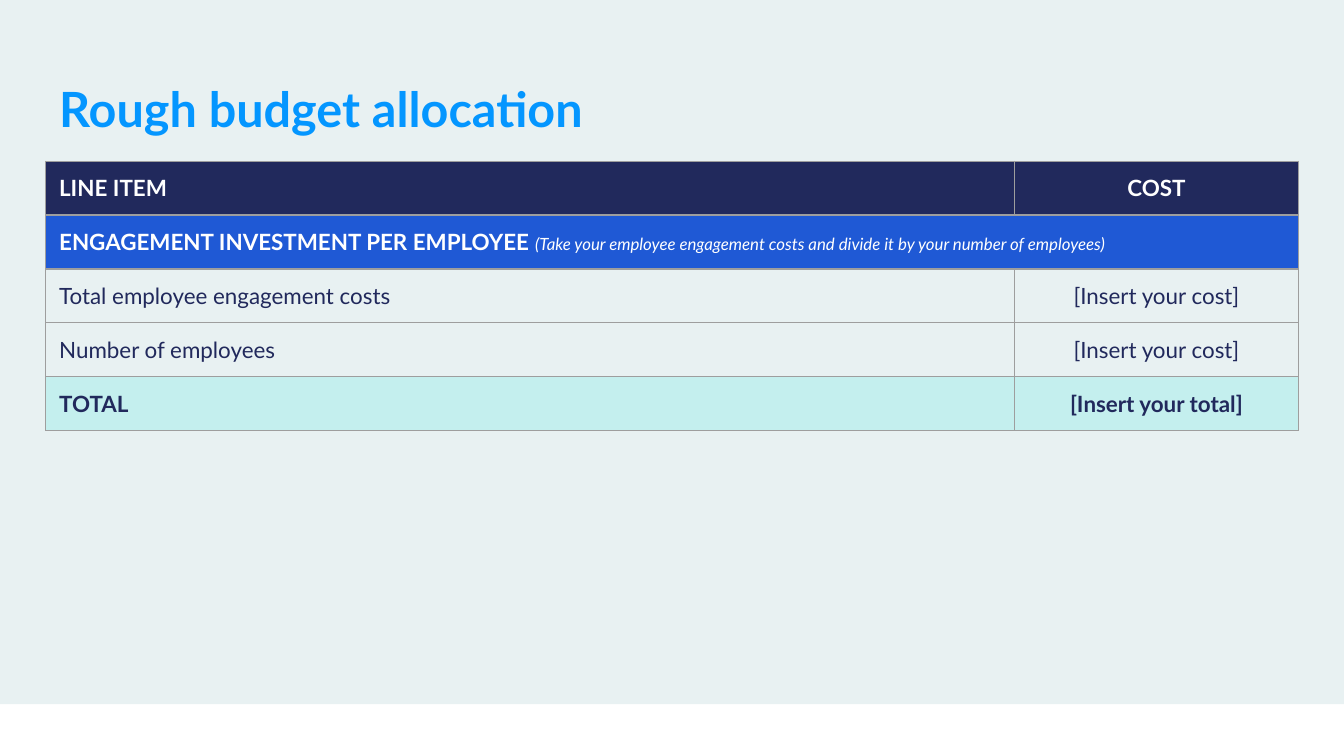
from lxml import etree
from pptx import Presentation
from pptx import util as u
from pptx.dml.color import RGBColor
from pptx.enum import shapes, text
from pptx.oxml import ns

FONT = "Lato"
WHITE = RGBColor(0xFF, 0xFF, 0xFF)
PALE = RGBColor(0xE8, 0xF1, 0xF2)
SKY = RGBColor(0x04, 0x96, 0xFF)
NAVY = RGBColor(0x21, 0x29, 0x5C)
BLUE = RGBColor(0x1F, 0x59, 0xD5)
MINT = RGBColor(0xC4, 0xEF, 0xEE)
GREY = RGBColor(0x9E, 0x9E, 0x9E)

PAGE_WIDTH = 10
PAGE_HEIGHT = PAGE_WIDTH * 9 / 16
COLUMN_WIDTHS = (7.21, 2.11)
SECTION_NOTE = "(Take your employee engagement costs and divide it by your number of employees)"
BUDGET_ROWS = (
    (("LINE ITEM", "COST"), NAVY, WHITE, True),
    (("ENGAGEMENT INVESTMENT PER EMPLOYEE ", ""), BLUE, WHITE, True),
    (("Total employee engagement costs", "[Insert your cost]"), None, NAVY, False),
    (("Number of employees", "[Insert your cost]"), None, NAVY, False),
    (("TOTAL", "[Insert your total]"), MINT, NAVY, True),
)
SECTION_ROW = 1


def set_font(font, size, color, bold):
    """Apply the deck typeface with the given size, colour and weight."""
    font.name, font.size, font.bold = FONT, u.Pt(size), bold
    font.color.rgb = color


def set_margins(item):
    """Give a cell or text frame equal inner margins."""
    item.margin_left = item.margin_right = u.Inches(0.1)
    item.margin_top = item.margin_bottom = u.Inches(0.1)


def add_background(page, left, top, width, height):
    """Place the pale panel behind everything else."""
    panel = page.shapes.add_shape(
        shapes.MSO_SHAPE.RECTANGLE, *map(u.Inches, (left, top, width, height)))
    panel.shadow.inherit = False
    panel.fill.solid()
    panel.fill.fore_color.rgb = PALE
    panel.line.fill.background()
    page.shapes.element.insert(2, panel.element)


def add_title(page, left, top, width, height):
    """Position and format the slide title."""
    title = page.shapes.title
    title.left, title.top, title.width, title.height = map(
        u.Inches, (left, top, width, height))
    frame = title.text_frame
    frame.text = "Rough budget allocation"
    frame.word_wrap = True
    frame.auto_size = text.MSO_AUTO_SIZE.NONE
    frame.vertical_anchor = text.MSO_ANCHOR.TOP
    set_margins(frame)
    para = frame.paragraphs[0]
    para.alignment = text.PP_ALIGN.LEFT
    set_font(para.font, 26, SKY, True)


def add_borders(cell):
    """Draw a thin grey line on all four sides of a cell."""
    properties = cell._tc.get_or_add_tcPr()
    for side in ("lnL", "lnR", "lnT", "lnB"):
        line = etree.SubElement(properties, ns.qn(f"a:{side}"), w=str(u.Pt(0.75)))
        fill = etree.SubElement(line, ns.qn("a:solidFill"))
        etree.SubElement(fill, ns.qn("a:srgbClr"), val=str(GREY))


def format_cell(cell, wording, fill, color, bold, centred):
    """Fill one cell with its wording, borders and colours."""
    set_margins(cell)
    add_borders(cell)
    if fill is None:
        cell.fill.background()
    else:
        cell.fill.solid()
        cell.fill.fore_color.rgb = fill
    para = cell.text_frame.paragraphs[0]
    para.alignment = text.PP_ALIGN.CENTER if centred else text.PP_ALIGN.LEFT
    if wording:
        para.add_run().text = wording
    set_font(para.font, 12, color, bold)


def add_budget_table(page, left, top, width, height):
    """Build the budget table with its merged section row."""
    table = page.shapes.add_table(
        len(BUDGET_ROWS), len(COLUMN_WIDTHS),
        *map(u.Inches, (left, top, width, height))).table
    table.first_row = table.horz_banding = False
    for column, column_width in zip(table.columns, COLUMN_WIDTHS):
        column.width = u.Inches(column_width)
    for row, (wordings, fill, color, bold) in enumerate(BUDGET_ROWS):
        table.rows[row].height = u.Inches(height / len(BUDGET_ROWS))
        for column, wording in enumerate(wordings):
            format_cell(table.cell(row, column), wording, fill, color, bold, column == 1)
    section = table.cell(SECTION_ROW, 0)
    section.merge(table.cell(SECTION_ROW, 1))
    span = section.text_frame.paragraphs[0].add_run()
    span.text = SECTION_NOTE
    set_font(span.font, 9, WHITE, False)
    span.font.italic = True


def main():
    """Create the deck and save it."""
    deck = Presentation()
    deck.slide_width, deck.slide_height = u.Inches(PAGE_WIDTH), u.Inches(PAGE_HEIGHT)
    page = deck.slides.add_slide(deck.slide_layouts.get_by_name("Title Only"))
    add_background(page, 0, 0, PAGE_WIDTH, 5.24)
    add_title(page, 0.34, 0.49, 9.32, 0.63)
    add_budget_table(page, 0.34, 1.2, 9.32, 2)
    deck.save("out.pptx")


if __name__ == "__main__":
    main()
